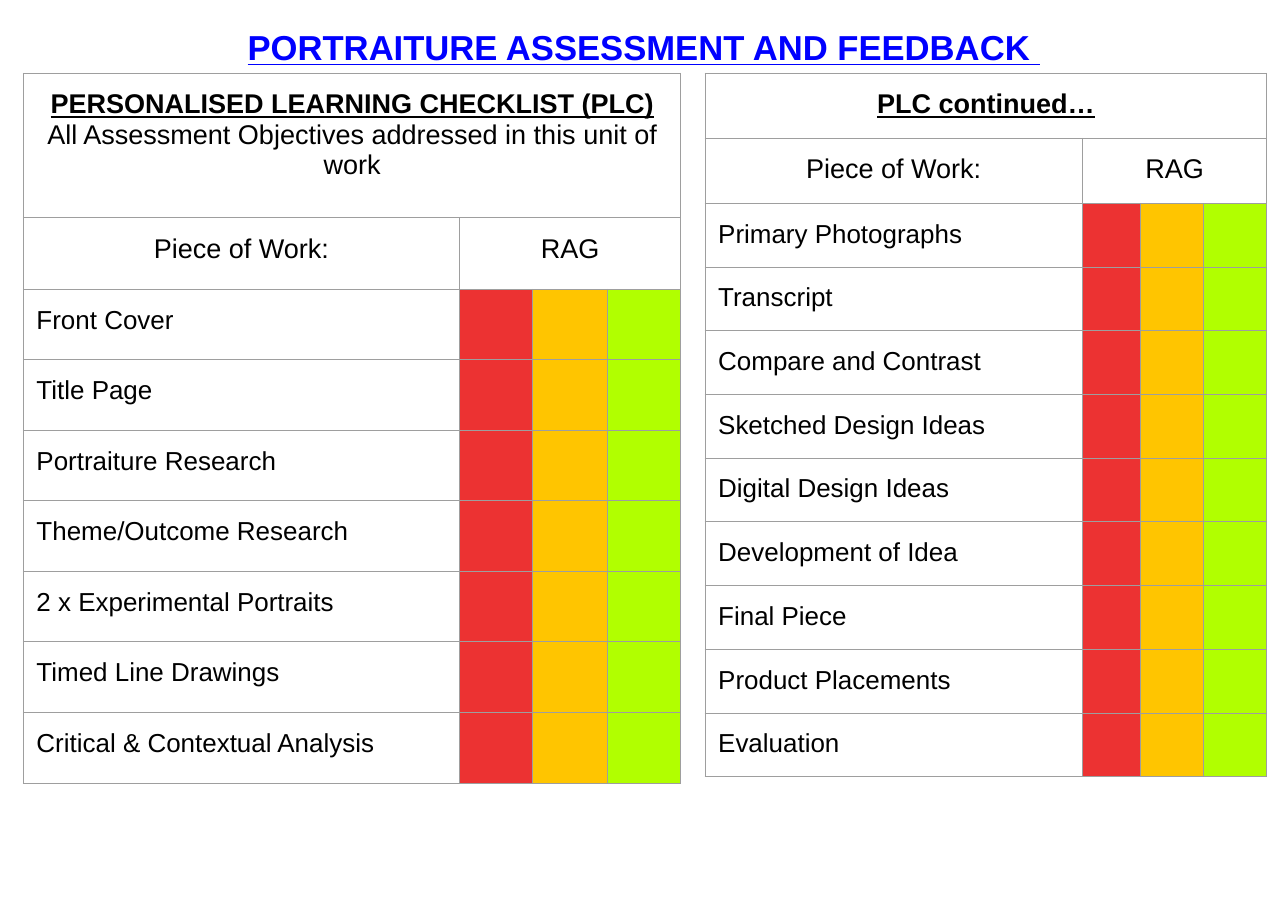
from dataclasses import dataclass

from lxml import etree
from pptx import Presentation
from pptx.dml.color import RGBColor
from pptx.enum import text as t
from pptx.oxml import ns
from pptx.util import Cm, Pt


@dataclass(frozen=True)
class Theme:
    font: str = "Arial"
    ink: str = "000000"
    title_ink: str = "0000FF"
    border: str = "9E9E9E"
    border_pt: float = 0.75
    rag: tuple[str, ...] = ("EC3232", "FFC500", "B1FF00")
    title_size: int = 32
    heading_size: int = 25
    work_size: int = 24


@dataclass(frozen=True)
class Checklist:
    """One table of work with its RAG columns; lengths in centimetres."""
    left: float
    columns: tuple[float, ...]
    heading_height: float
    labels_height: float
    work_height: float
    heading: str
    subheading: str
    works: tuple[str, ...]


THEME = Theme()
CHECKLIST_TOP = 2.39
CHECKLISTS = (
    Checklist(0.76, (14.22, 2.39, 2.43, 2.4), 4.7, 2.34, 2.3,
              "PERSONALISED LEARNING CHECKLIST (PLC)",
              "All Assessment Objectives addressed in this unit of work",
              ("Front Cover", "Title Page", "Portraiture Research",
               "Theme/Outcome Research", "2 x Experimental Portraits",
               "Timed Line Drawings", "Critical & Contextual Analysis")),
    Checklist(22.99, (12.3, 1.89, 2.07, 2.06), 2.1, 2.1, 2.07,
              "PLC continued…", "",
              ("Primary Photographs", "Transcript", "Compare and Contrast",
               "Sketched Design Ideas", "Digital Design Ideas",
               "Development of Idea", "Final Piece", "Product Placements",
               "Evaluation")),
)


def write(paragraph, words: str, *, size: int, color: str = THEME.ink,
          strong: bool = False, centred: bool = True) -> None:
    """Add a run; strong text is bold and underlined."""
    paragraph.alignment = t.PP_ALIGN.CENTER if centred else t.PP_ALIGN.LEFT
    run = paragraph.add_run()
    run.text = words
    run.font.name = THEME.font
    run.font.size = Pt(size)
    run.font.bold = run.font.underline = strong
    run.font.color.rgb = RGBColor.from_string(color)


def style_cell(cell) -> None:
    """Clear the fill, set the margins and draw all four borders."""
    cell.margin_left = cell.margin_right = Cm(0.43)
    cell.margin_top = cell.margin_bottom = Cm(0.53)
    cell.fill.background()
    properties = cell._tc.get_or_add_tcPr()
    for position, side in enumerate(("lnL", "lnR", "lnT", "lnB")):
        line = etree.Element(ns.qn(f"a:{side}"), w=str(Pt(THEME.border_pt)))
        fill = etree.SubElement(line, ns.qn("a:solidFill"))
        etree.SubElement(fill, ns.qn("a:srgbClr"), val=THEME.border)
        properties.insert(position, line)


def draw_checklist(slide, checklist: Checklist) -> None:
    heights = (checklist.heading_height, checklist.labels_height,
               *[checklist.work_height] * len(checklist.works))
    table = slide.shapes.add_table(
        len(heights), len(checklist.columns), Cm(checklist.left),
        Cm(CHECKLIST_TOP), Cm(sum(checklist.columns)), Cm(sum(heights))).table
    table.first_row = table.horz_banding = False
    for column, width in zip(table.columns, checklist.columns):
        column.width = Cm(width)
    for row, height in zip(table.rows, heights):
        row.height = Cm(height)
    for cell in table.iter_cells():
        style_cell(cell)

    # Heading across the whole table
    heading = table.cell(0, 0)
    heading.merge(table.cell(0, 3))
    write(heading.text_frame.paragraphs[0], checklist.heading,
          size=THEME.heading_size, strong=True)
    if checklist.subheading:
        write(heading.text_frame.add_paragraph(), checklist.subheading,
              size=THEME.heading_size)

    # Column labels
    table.cell(1, 1).merge(table.cell(1, 3))
    for column, label in enumerate(("Piece of Work:", "RAG")):
        write(table.cell(1, column).text_frame.paragraphs[0], label,
              size=THEME.heading_size)

    # Pieces of work with red, amber and green cells
    for row, work in enumerate(checklist.works, start=2):
        write(table.cell(row, 0).text_frame.paragraphs[0], work,
              size=THEME.work_size, centred=False)
        for column, color in enumerate(THEME.rag, start=1):
            rating = table.cell(row, column)
            rating.fill.solid()
            rating.fill.fore_color.rgb = RGBColor.from_string(color)


def draw_title(slide, width: int) -> None:
    title = slide.shapes.add_textbox(0, Cm(0.39), width, Cm(2.29)).text_frame
    title.word_wrap = True
    title.auto_size = t.MSO_AUTO_SIZE.SHAPE_TO_FIT_TEXT
    title.margin_left = title.margin_right = Cm(0.46)
    title.margin_top = title.margin_bottom = Cm(0.46)
    write(title.paragraphs[0], "PORTRAITURE ASSESSMENT AND FEEDBACK ",
          size=THEME.title_size, color=THEME.title_ink, strong=True)


def main() -> None:
    deck = Presentation()
    deck.slide_width, deck.slide_height = Cm(42), Cm(29.7)  # A3 landscape
    slide = deck.slides.add_slide(deck.slide_layouts[6])
    # Left checklist, title, then the continued checklist
    first, continued = CHECKLISTS
    draw_checklist(slide, first)
    draw_title(slide, deck.slide_width)
    draw_checklist(slide, continued)
    deck.save("out.pptx")


if __name__ == "__main__":
    main()
